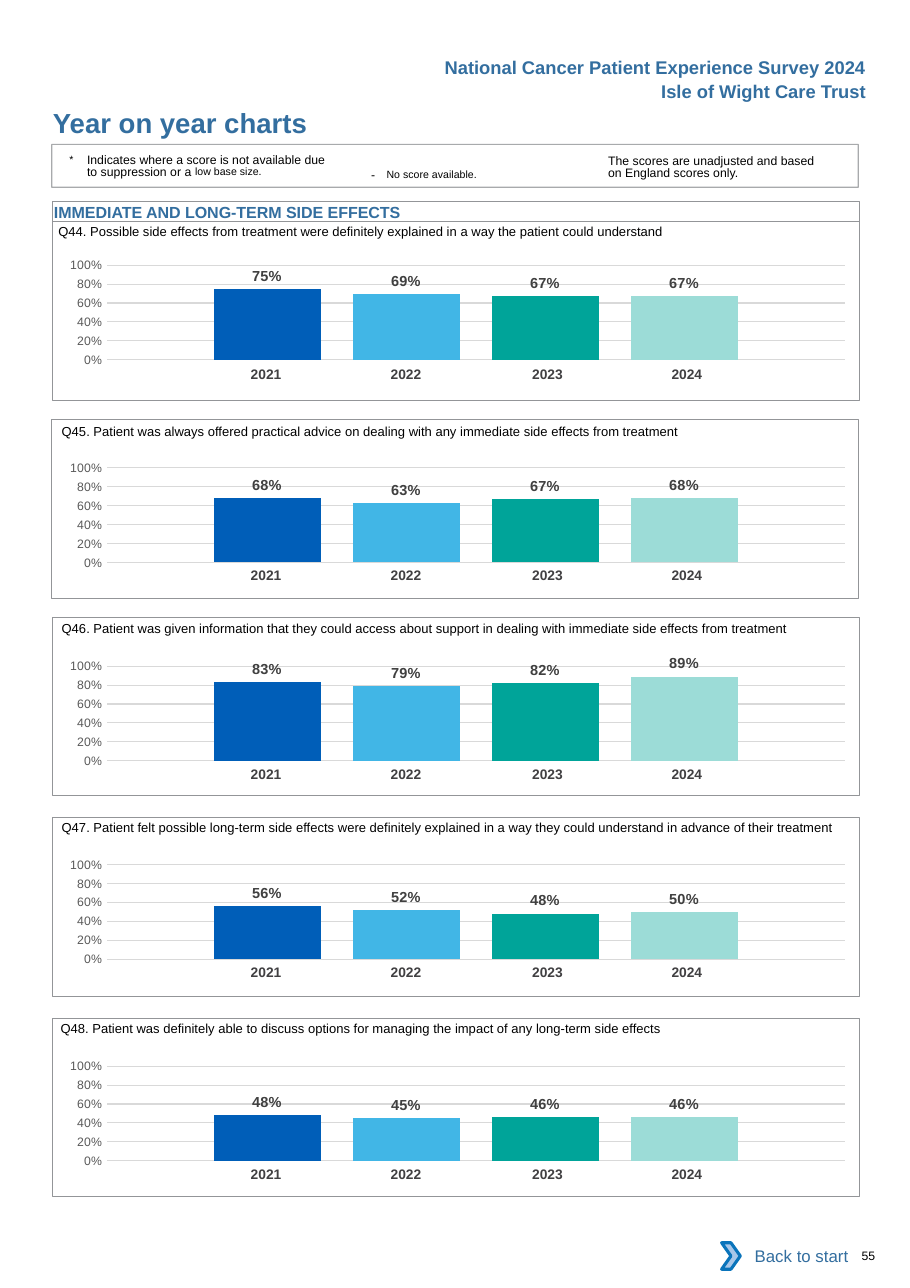
from lxml import etree
from pptx import Presentation
from pptx.chart.data import CategoryChartData
from pptx.dml.color import RGBColor
from pptx.enum.chart import XL_CHART_TYPE, XL_LABEL_POSITION, XL_TICK_MARK
from pptx.enum.shapes import MSO_SHAPE
from pptx.enum.text import MSO_ANCHOR, PP_ALIGN
from pptx.oxml import parse_xml
from pptx.oxml.ns import nsdecls, qn
from pptx.util import Inches, Pt

COLUMNS = XL_CHART_TYPE.COLUMN_CLUSTERED
OUTSIDE_END = XL_LABEL_POSITION.OUTSIDE_END
NO_TICKS = XL_TICK_MARK.NONE
RECTANGLE, CHEVRON = MSO_SHAPE.RECTANGLE, MSO_SHAPE.CHEVRON
TOP, MIDDLE = MSO_ANCHOR.TOP, MSO_ANCHOR.MIDDLE
LEFT, CENTER, RIGHT = PP_ALIGN.LEFT, PP_ALIGN.CENTER, PP_ALIGN.RIGHT

HEADING_BLUE = "336E9F"
BORDER_GREY = "939598"
NO_GRID_STYLE = "{2D5ABB26-0587-4C30-8999-92F81FD0307C}"
YEARS = ["2021", "2022", "2023", "2024"]
YEAR_COLORS = ["005EB8", "41B6E6", "00A499", "9CDCD7"]
YEAR_WIDTHS = [1.27, 1.27, 1.34, 1.27]
YEAR_RIGHT_INSETS = [0, 0, 0.04, 0.12]
PLOT_LAYOUT = {"x": 0.079, "y": 0.145, "w": 0.915, "h": 0.666}

# question, question left and top, frame left and top, chart top, year row top, scores
PANELS = [
    ("Q44. Possible side effects from treatment were definitely explained in a way "
     "the patient could understand",
     (0.53, 1.94), (0.48, 2.01), 2.22, 3.28, [0.75, 0.69, 0.67, 0.67]),
    ("Q45. Patient was always offered practical advice on dealing with any immediate "
     "side effects from treatment",
     (0.56, 3.75), (0.47, 3.81), 4.06, 5.11, [0.68, 0.63, 0.67, 0.68]),
    ("Q46. Patient was given information that they could access about support in "
     "dealing with immediate side effects from treatment",
     (0.56, 5.54), (0.48, 5.6), 5.86, 6.91, [0.83, 0.79, 0.82, 0.89]),
    ("Q47. Patient felt possible long-term side effects were definitely explained in "
     "a way they could understand in advance of their treatment",
     (0.56, 7.35), (0.48, 7.42), 7.66, 8.71, [0.56, 0.52, 0.48, 0.5]),
    ("Q48. Patient was definitely able to discuss options for managing the impact of "
     "any long-term side effects",
     (0.55, 9.17), (0.48, 9.24), 9.49, 10.54, [0.48, 0.45, 0.46, 0.46]),
]


def rgb(color):
    return RGBColor.from_string(color)


def style_font(font, size, color="000000", bold=False):
    font.name = "Arial"
    font.size = Pt(size)
    font.bold = bold
    font.color.rgb = rgb(color)


def write(frame, text, size=8, color="000000", bold=False, align=LEFT, anchor=TOP,
          insets=(0, 0, 0, 0), leading=None, hanging=0, wrap=True):
    frame.word_wrap = wrap
    frame.vertical_anchor = anchor
    (frame.margin_left, frame.margin_top,
     frame.margin_right, frame.margin_bottom) = map(Inches, insets)
    paragraph = frame.paragraphs[0]
    paragraph.alignment = align
    if leading:
        paragraph.line_spacing = Pt(leading)
    if hanging:
        properties = paragraph._p.get_or_add_pPr()
        properties.set("marL", str(Inches(hanging)))
        properties.set("indent", str(-Inches(hanging)))
    pieces = [(text, size, {})] if isinstance(text, str) else text
    for words, points, attributes in pieces:
        run = paragraph.add_run()
        run.text = words
        style_font(run.font, points, color, bold)
        for name, value in attributes.items():
            run.font._element.set(name, value)


def add_text(slide, box, text, **fmt):
    write(slide.shapes.add_textbox(*map(Inches, box)).text_frame, text, **fmt)


def add_box(slide, box, kind=RECTANGLE, fill=None, line=None, width=0.5, opacity=None):
    shape = slide.shapes.add_shape(kind, *map(Inches, box))
    shape.shadow.inherit = False
    if fill:
        shape.fill.solid()
        shape.fill.fore_color.rgb = rgb(fill)
    else:
        shape.fill.background()
    if line:
        shape.line.color.rgb = rgb(line)
        shape.line.width = Pt(width)
    else:
        shape.line.fill.background()
    if opacity:
        line_color = shape.line._ln.find(".//" + qn("a:srgbClr"))
        etree.SubElement(line_color, qn("a:alpha")).set("val", str(opacity * 1000))
    return shape


def add_year_row(slide, top):
    row = slide.shapes.add_table(1, len(YEARS), Inches(1.73), Inches(top),
                                 Inches(sum(YEAR_WIDTHS)), Inches(0.27))
    row.element.find(".//" + qn("a:tableStyleId")).text = NO_GRID_STYLE
    table = row.table
    table.first_row = table.horz_banding = False
    for index, year in enumerate(YEARS):
        table.columns[index].width = Inches(YEAR_WIDTHS[index])
        cell = table.cell(0, index)
        cell.fill.background()
        (cell.margin_left, cell.margin_top, cell.margin_right,
         cell.margin_bottom) = map(Inches, (0.1, 0.05, YEAR_RIGHT_INSETS[index], 0.05))
        paragraph = cell.text_frame.paragraphs[0]
        paragraph.alignment = CENTER
        run = paragraph.add_run()
        run.text = year
        style_font(run.font, 9, "414042", True)


def set_plot_layout(chart):
    plot_area = chart.element.find(".//" + qn("c:plotArea"))
    for layout in plot_area.findall(qn("c:layout")):
        plot_area.remove(layout)
    sizes = "".join(f'<c:{key} val="{value}"/>' for key, value in PLOT_LAYOUT.items())
    plot_area.insert(0, parse_xml(
        f'<c:layout {nsdecls("c")}><c:manualLayout><c:layoutTarget val="inner"/>'
        f'<c:xMode val="edge"/><c:yMode val="edge"/>{sizes}'
        '</c:manualLayout></c:layout>'))


def add_score_chart(slide, top, scores):
    data = CategoryChartData(number_format="0%")
    data.categories = ["1"]
    for number, score in enumerate(scores, 1):
        data.add_series(f"Series {number}", [score])
    chart = slide.shapes.add_chart(COLUMNS, Inches(0.39), Inches(top), Inches(7.32),
                                   Inches(1.29), data).chart
    chart.has_title = chart.has_legend = False
    chart.font.name = "Calibri"
    chart.font.size = Pt(10)
    chart.font.color.rgb = rgb("000000")
    chart.category_axis.visible = False
    axis = chart.value_axis
    axis.minimum_scale, axis.maximum_scale, axis.major_unit = 0, 1, 0.2
    axis.major_tick_mark = axis.minor_tick_mark = NO_TICKS
    axis.format.line.fill.background()
    axis.major_gridlines.format.line.color.rgb = rgb("D9D9D9")
    axis.major_gridlines.format.line.width = Pt(0.75)
    axis.tick_labels.number_format = "0%"
    axis.tick_labels.number_format_is_linked = False
    style_font(axis.tick_labels.font, 8, "595959")
    plot = chart.plots[0]
    plot.vary_by_categories = False
    plot.gap_width, plot.overlap = 200, -30
    for series, color in zip(plot.series, YEAR_COLORS):
        series.format.fill.solid()
        series.format.fill.fore_color.rgb = rgb(color)
        labels = series.data_labels
        labels.show_value = True
        labels.position = OUTSIDE_END
        labels.number_format = "0%"
        labels.number_format_is_linked = False
        style_font(labels.font, 9.5, "404040", True)
    set_plot_layout(chart)


def add_panel(slide, question, question_at, frame_at, chart_top, years_top, scores):
    add_year_row(slide, years_top)
    add_score_chart(slide, chart_top, scores)
    add_box(slide, (*frame_at, 7.32, 1.62), line=BORDER_GREY)
    left, top = question_at
    add_text(slide, (left, top, 7.8 - left, 0.24), question, size=8.5,
             insets=(0, 0.09, 0, 0))


def add_header(slide):
    title = slide.shapes.title
    title.left, title.top, title.width, title.height = map(Inches, (0.48, 0.96, 4.5, 0.3))
    write(title.text_frame, "Year on year charts", size=18, color=HEADING_BLUE, bold=True)
    for top, left, text in [(0.46, 3.92, "National Cancer Patient Experience Survey 2024"),
                            (0.68, 5.88, "Isle of Wight Care Trust")]:
        add_text(slide, (left, top, 7.96 - left, 0.3), text, size=12, color=HEADING_BLUE,
                 bold=True, align=RIGHT, insets=(0.1, 0.05, 0.1, 0.05), wrap=False)


def add_legend(slide):
    add_box(slide, (0.47, 1.31, 7.32, 0.39), line=BORDER_GREY, width=0.75, opacity=80)
    add_text(slide, (0.63, 1.38, 2.72, 0.27),
             [("*\t", 12, {"baseline": "3000"}),
              ("Indicates where a score is not available due to suppression or a ", 8, {}),
              ("low base size.", 12, {"baseline": "7000"})],
             insets=(0, 0.03, 0.35, 0), leading=8.1, hanging=0.16)
    add_text(slide, (3.27, 1.41, 1.83, 0.24),
             [("- ", 8, {"spc": "260"}),
              ("No score available.", 12, {"baseline": "3000"})],
             insets=(0.1, 0.05, 0.1, 0.05))
    add_text(slide, (5.52, 1.38, 2.01, 0.27),
             "The scores are unadjusted and based on England scores only.",
             insets=(0, 0.03, 0, 0), leading=8.1)


def add_footer(slide):
    back_button = add_box(slide, (6.62, 11.19, 1.18, 0.42), fill="FFFFFF")
    write(back_button.text_frame, "Back to start", size=11, color=HEADING_BLUE,
          align=RIGHT, anchor=MIDDLE, insets=(0.1, 0.05, 0.1, 0.05))
    add_box(slide, (6.55, 11.28, 0.17, 0.24), CHEVRON, "A8C7E9", "0A74BB", 2)
    add_text(slide, (7.82, 11.33, 0.41, 0.13), "55")


def main():
    deck = Presentation()
    deck.slide_width, deck.slide_height = Inches(8.26), Inches(11.69)
    slide = deck.slides.add_slide(deck.slide_layouts[5])
    add_header(slide)
    add_legend(slide)
    section = add_box(slide, (0.48, 1.83, 7.32, 0.18), line=BORDER_GREY)
    write(section.text_frame, "IMMEDIATE AND LONG-TERM SIDE EFFECTS", size=10.5,
          color=HEADING_BLUE, bold=True, insets=(0.01, 0.01, 0, 0))
    for panel in PANELS:
        add_panel(slide, *panel)
    add_footer(slide)
    deck.save("out.pptx")


if __name__ == "__main__":
    main()
